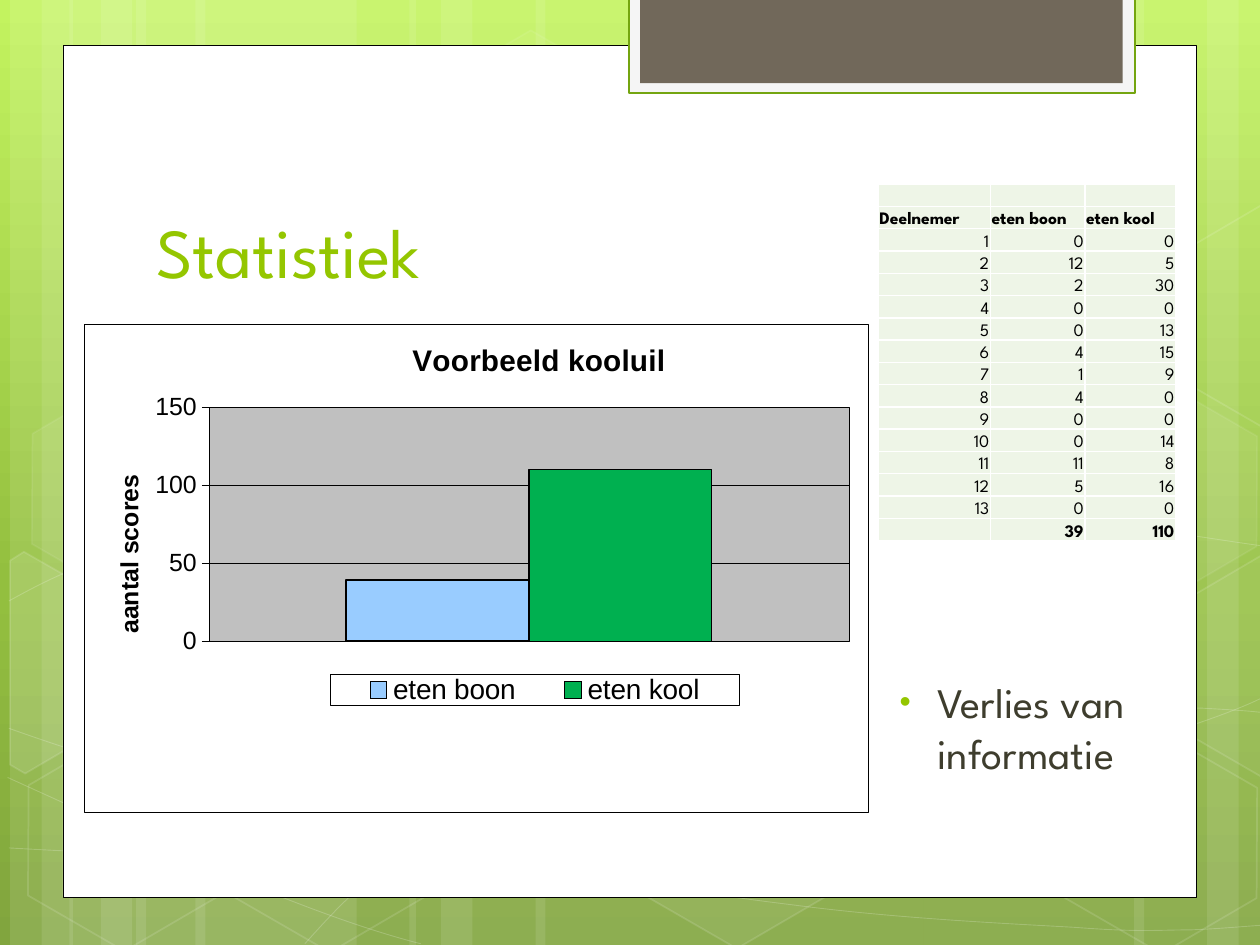
from copy import deepcopy
from typing import NamedTuple, Optional

from pptx import Presentation, oxml
from pptx import util as u
from pptx.chart import data
from pptx.dml.color import RGBColor
from pptx.enum import chart as ch, shapes, text
from pptx.oxml.ns import nsdecls, qn

WHITE = RGBColor(0xFF, 0xFF, 0xFF)
BLACK = RGBColor(0, 0, 0)
LIME = RGBColor(0x94, 0xC6, 0x00)
TAB_EDGE = RGBColor(0x74, 0xA5, 0x10)
TAB_RIM = RGBColor(0xF5, 0xF5, 0xF5)
TAUPE = RGBColor(0x71, 0x68, 0x5A)
OLIVE = RGBColor(0x3E, 0x3D, 0x2D)
CELL = RGBColor(0xEE, 0xF5, 0xE7)
PLOT_GREY = RGBColor(0xC0, 0xC0, 0xC0)
BEAN = RGBColor(0x99, 0xCC, 0xFF)
CABBAGE = RGBColor(0x00, 0xB0, 0x50)
SKY = [(0, RGBColor(0xC3, 0xF3, 0x5F)), (0.62, RGBColor(0x93, 0xBF, 0x3F)),
       (1, RGBColor(0x81, 0xA5, 0x3E))]
FONT = "League Spartan"
CHART_BOX = (0.67, 2.57, 6.22, 3.88)


class Style(NamedTuple):
    fill: Optional[RGBColor] = None
    fill_alpha: int = 100
    line: Optional[RGBColor] = None
    width: float = 1
    line_alpha: int = 100


class Band(NamedTuple):
    left: float
    width: float
    rotation: int = 0


class Hexagon(NamedTuple):
    left: float
    top: float
    fill_alpha: int
    line_alpha: int = 12


class Outline(NamedTuple):
    points: list
    fill_alpha: int


BANDS = [Band(1.08, 1.75), Band(0.08, 0.5), Band(0.33, 0.83), Band(1.55, 1.75), Band(0.55, 0.5),
         Band(0.8, 0.83), Band(7.33, 1.75, 180), Band(9.58, 0.5, 180), Band(9, 0.83, 180),
         Band(4.25, 3.08), Band(3.25, 0.5), Band(3.5, 0.83)]
CURVES = [
    [(0.07, 6.73), (0.61, 6.76), (1.15, 6.79), (1.9, 6.78), (2.65, 6.77), (3.58, 6.75), (4.58, 6.65),
     (5.58, 6.55), (7, 6.36), (7.92, 6.17), (8.83, 5.98), (9.77, 5.68), (10.07, 5.51)],
    [(0.07, 4.77), (0.36, 4.61), (0.65, 4.46), (1.21, 4.31), (1.78, 4.16), (2.59, 3.94), (3.47, 3.87),
     (4.36, 3.8), (5.44, 3.79), (6.54, 3.87), (7.64, 3.95), (9.47, 4.26), (10.07, 4.34)],
    [(0.06, 6.17), (1.27, 6.72), (2.47, 7.27), (3.34, 7.49)],
    [(0.07, 5.78), (0.38, 5.89), (0.7, 6), (1.28, 6.16), (1.86, 6.31), (2.73, 6.56), (3.57, 6.73),
     (4.4, 6.9), (5.45, 7.08), (6.28, 7.18), (7.11, 7.29), (8, 7.33), (8.53, 7.36),
     (9.05, 7.4), (9.19, 7.38), (9.45, 7.38), (9.71, 7.37), (9.89, 7.35), (10.07, 7.34)],
    [(2.42, 7.49), (2.6, 7.29), (2.78, 7.09), (3.02, 6.91), (3.26, 6.73), (3.6, 6.53), (3.88, 6.39),
     (4.16, 6.25), (4.33, 6.19), (4.7, 6.09), (5.06, 5.99), (5.73, 5.85), (6.08, 5.78),
     (6.44, 5.71), (6.49, 5.71), (6.8, 5.69), (7.11, 5.66), (7.6, 5.63), (7.94, 5.62),
     (8.29, 5.61), (8.86, 5.62), (8.86, 5.62), (9.08, 5.62), (9.31, 5.62), (9.53, 5.62),
     (9.71, 5.63), (9.88, 5.64), (9.97, 5.65), (10.06, 5.66), (10.03, 5.65), (10.06, 5.66)],
]
HEXAGONS = [Hexagon(3.34, 0.36, 4, 8), Hexagon(4.97, 5.89, 6), Hexagon(0.11, 5.91, 0),
            Hexagon(0.14, 3.12, 7, 8), Hexagon(1.74, 5.92, 0), Hexagon(7.53, 4.53, 10),
            Hexagon(8.34, 5.93, 0), Hexagon(8.34, 3.14, 7, 8)]
CUT_HEXAGONS = [
    Outline([(0.08, 4.45), (0.19, 4.38), (0.96, 4.82), (0.95, 5.7), (0.2, 6.14), (0.08, 6.07)], 10),
    Outline([(9.26, 4.85), (10.01, 4.41), (10.09, 4.46), (10.09, 6.13), (10.02, 6.17), (9.26, 5.73)], 4),
    Outline([(9.26, 2.07), (10.01, 1.63), (10.1, 1.68), (10.09, 3.35), (10.02, 3.39), (9.26, 2.95)], 0),
]
BEANS = [0, 12, 2, 0, 0, 4, 1, 4, 0, 0, 11, 5, 0]
CABBAGES = [0, 5, 30, 0, 13, 15, 9, 0, 0, 14, 8, 16, 0]


def set_alpha(holder, percent: int) -> None:
    if percent < 100:
        color = next(holder.iter(qn("a:srgbClr")))
        color.append(oxml.parse_xml(f'<a:alpha {nsdecls("a")} val="{percent * 1000}"/>'))


def paint(sp, style: Style) -> None:
    sp.shadow.inherit = False
    pr = sp._element.spPr
    if style.fill is None or style.fill_alpha == 0:
        sp.fill.background()
    else:
        sp.fill.solid()
        sp.fill.fore_color.rgb = style.fill
        set_alpha(pr.find(qn("a:solidFill")), style.fill_alpha)
    if style.line is None:
        sp.line.fill.background()
    else:
        sp.line.color.rgb = style.line
        sp.line.width = u.Pt(style.width)
        set_alpha(pr.find(qn("a:ln")), style.line_alpha)


def add_preset(s, kind, box: tuple, style: Style, rotation: int = 0):
    sp = s.shapes.add_shape(kind, *map(u.Inches, box))
    sp.rotation = rotation
    paint(sp, style)
    return sp


def add_outline(s, points: list, style: Style, close: bool):
    emu = [(u.Inches(x), u.Inches(y)) for x, y in points]
    builder = s.shapes.build_freeform(*emu[0], scale=1.0)
    builder.add_line_segments(emu[1:], close=close)
    sp = builder.convert_to_shape()
    paint(sp, style)
    return sp


def add_curve(s, points: list, style: Style) -> None:
    sp = add_outline(s, points, style, False)
    lines = list(sp._element.iter(qn("a:lnTo")))
    for i in range(0, len(lines), 3):
        bezier = oxml.parse_xml(f'<a:cubicBezTo {nsdecls("a")}/>')
        lines[i].addprevious(bezier)
        for line in lines[i:i + 3]:
            bezier.append(line[0])
            line.getparent().remove(line)


def set_font(font, size: float, color: RGBColor, name: str, bold: bool = False) -> None:
    font.size, font.name, font.bold = u.Pt(size), name, bold
    font.color.rgb = color


def write(tf, content: str, *, size: float, color: RGBColor, name: str = FONT,
          bold: bool = False, align=text.PP_ALIGN.LEFT):
    p = tf.paragraphs[0]
    p.alignment = align
    r = p.add_run()
    r.text = content
    set_font(r.font, size, color, name, bold)
    return p


def place(s, holder, box: tuple, anchor) -> None:
    holder.left, holder.top, holder.width, holder.height = map(u.Inches, box)
    holder.text_frame.auto_size = text.MSO_AUTO_SIZE.NONE
    holder.text_frame.vertical_anchor = anchor
    s.shapes._spTree.append(holder._element)


def add_backdrop(s) -> None:
    fill = s.background.fill
    fill.gradient()
    fill.gradient_angle = 270
    stops = next(s._element.iter(qn("a:gsLst")))
    stops.append(deepcopy(stops[-1]))
    for stop, (position, color) in zip(fill.gradient_stops, SKY):
        stop.position, stop.color.rgb = position, color
    for b in BANDS:
        add_preset(s, shapes.MSO_SHAPE.RECTANGLE, (b.left, 0, b.width, 7.5), Style(WHITE, 10), b.rotation)
    for curve in CURVES:
        add_curve(s, curve, Style(line=WHITE, width=0.5, line_alpha=20))
    for h in HEXAGONS:
        sp = add_preset(s, shapes.MSO_SHAPE.HEXAGON, (h.left, h.top, 1.75, 1.52),
                        Style(WHITE, h.fill_alpha, WHITE, 1, h.line_alpha), 30)
        sp.adjustments[0] = 0.285
    for o in CUT_HEXAGONS:
        add_outline(s, o.points, Style(WHITE, o.fill_alpha, WHITE, 1, 12), True)
    for box, style in [((0.5, 0.36, 9, 6.76), Style(WHITE, line=BLACK, width=0.5)),
                       ((4.99, -0.02, 4.02, 0.76), Style(TAB_RIM, line=TAB_EDGE, width=1.25)),
                       ((5.08, -0.02, 3.83, 0.68), Style(TAUPE))]:
        add_preset(s, shapes.MSO_SHAPE.RECTANGLE, box, style)


def set_layout(part, index: int, inner: bool = False, **inches: float) -> None:
    for old in part.findall(qn("c:layout")):
        part.remove(old)
    target = '<c:layoutTarget val="inner"/>' if inner else ""
    modes = "".join(f'<c:{k}Mode val="edge"/>' for k in ("x", "y"))
    sizes = "".join(f'<c:{k} val="{v / CHART_BOX[2 if k in "xw" else 3]}"/>' for k, v in inches.items())
    part.insert(index, oxml.parse_xml(
        f'<c:layout {nsdecls("c")}><c:manualLayout>{target}{modes}{sizes}</c:manualLayout></c:layout>'))


def set_box(part, fill: RGBColor) -> None:
    pr = oxml.parse_xml(
        f'<c:spPr {nsdecls("c", "a")}><a:solidFill><a:srgbClr val="{fill}"/></a:solidFill>'
        f'<a:ln w="3175"><a:solidFill><a:srgbClr val="{BLACK}"/></a:solidFill></a:ln></c:spPr>')
    following = part.find(qn("c:txPr"))
    if following is None:
        part.append(pr)
    else:
        following.addprevious(pr)


def add_score_chart(s) -> None:
    cd = data.CategoryChartData()
    cd.categories = ["1"]
    cd.add_series("eten boon", [sum(BEANS)])
    cd.add_series("eten kool", [sum(CABBAGES)])
    chart = s.shapes.add_chart(ch.XL_CHART_TYPE.COLUMN_CLUSTERED, *map(u.Inches, CHART_BOX), cd).chart
    set_font(chart.font, 14.2, BLACK, "Arial")
    plot = chart.plots[0]
    plot.gap_width, plot.overlap, plot.vary_by_categories = 150, 0, False
    for series, color, width in zip(plot.series, (BEAN, CABBAGE), (1, 0.75)):
        series.format.fill.solid()
        series.format.fill.fore_color.rgb = color
        series.format.line.color.rgb = BLACK
        series.format.line.width = u.Pt(width)
    chart.category_axis.visible = False
    axis = chart.value_axis
    axis.minimum_scale, axis.maximum_scale, axis.major_unit = 0, 150, 50
    axis.major_tick_mark = ch.XL_TICK_MARK.OUTSIDE
    set_font(axis.tick_labels.font, 14.2, BLACK, "Arial")
    for line in (axis.format.line, axis.major_gridlines.format.line):
        line.color.rgb = BLACK
        line.width = u.Pt(0.25)
    for title, content, size in ((chart.chart_title, "Voorbeeld kooluil", 17),
                                 (axis.axis_title, "aantal scores", 14.2)):
        write(title.text_frame, content, size=size, color=BLACK, name="Arial", bold=True,
              align=text.PP_ALIGN.CENTER)
    chart.has_legend = True
    legend = chart.legend
    legend.position, legend.include_in_layout = ch.XL_LEGEND_POSITION.BOTTOM, False
    set_font(legend.font, 16, BLACK, "Arial")
    area = next(chart._chartSpace.iter(qn("c:plotArea")))
    set_layout(area, 0, inner=True, x=0.99, y=0.66, w=5.08, h=1.86)
    set_layout(legend._element, 1, x=1.95, y=2.78, w=3.25, h=0.25)
    set_layout(chart.chart_title._element, 1, x=2.56, y=0.09)
    set_layout(axis.axis_title._element, 1, x=0.19, y=1.16)
    for part, fill in ((area, PLOT_GREY), (legend._element, WHITE), (chart._chartSpace, WHITE)):
        set_box(part, fill)


def format_cell(cell, content: str, bold: bool, align) -> None:
    cell.margin_left = cell.margin_right = cell.margin_top = u.Inches(0.01)
    cell.margin_bottom = 0
    cell.vertical_anchor = text.MSO_ANCHOR.BOTTOM
    cell.fill.solid()
    cell.fill.fore_color.rgb = CELL
    for i, side in enumerate("LRTB"):
        cell._tc.tcPr.insert(i, oxml.parse_xml(
            f'<a:ln{side} {nsdecls("a")} w="12700"><a:solidFill><a:srgbClr val="{WHITE}"/>'
            f'</a:solidFill></a:ln{side}>'))
    if content:
        write(cell.text_frame, content, size=10, color=BLACK, bold=bold, align=align)
    else:
        cell.text_frame.paragraphs[0]._p.append(
            oxml.parse_xml(f'<a:endParaRPr {nsdecls("a")} sz="1000"/>'))


def add_score_table(s) -> None:
    rows = [("", "", ""), ("Deelnemer", "eten boon", "eten kool"),
            *zip(range(1, 14), BEANS, CABBAGES), ("", sum(BEANS), sum(CABBAGES))]
    table = s.shapes.add_table(len(rows), 3, *map(u.Inches, (6.97, 1.46, 2.36, 2.83))).table
    table.first_row = table.horz_banding = False
    for column, width in zip(table.columns, (0.89, 0.75, 0.72)):
        column.width = u.Inches(width)
    for i, row in enumerate(rows):
        table.rows[i].height = u.Inches(2.83 / len(rows))
        align = text.PP_ALIGN.LEFT if i == 1 else text.PP_ALIGN.RIGHT
        for j, value in enumerate(row):
            format_cell(table.cell(i, j), str(value), i in (1, len(rows) - 1), align)


def main() -> None:
    prs = Presentation()
    prs.slide_width, prs.slide_height = u.Inches(10), u.Inches(7.5)
    s = prs.slides.add_slide(prs.slide_layouts[1])
    title, body = s.placeholders
    add_backdrop(s)
    place(s, title, (1.14, 1.12, 7.68, 1.25), text.MSO_ANCHOR.BOTTOM)
    write(title.text_frame, "Statistiek", size=40, color=LIME)
    add_score_chart(s)
    add_score_table(s)
    place(s, body, (6.97, 5.32, 2.44, 1.21), text.MSO_ANCHOR.TOP)
    p = write(body.text_frame, "Verlies van informatie", size=24, color=OLIVE)
    pr = p._p.get_or_add_pPr()
    pr.set("marL", str(u.Inches(0.37)))
    pr.set("indent", str(u.Inches(-0.3)))
    for tag in (f'<a:buClr {nsdecls("a")}><a:srgbClr val="{LIME}"/></a:buClr>',
                f'<a:buSzPct {nsdecls("a")} val="76000"/>', f'<a:buChar {nsdecls("a")} char="•"/>'):
        pr.append(oxml.parse_xml(tag))
    prs.save("out.pptx")


if __name__ == "__main__":
    main()
